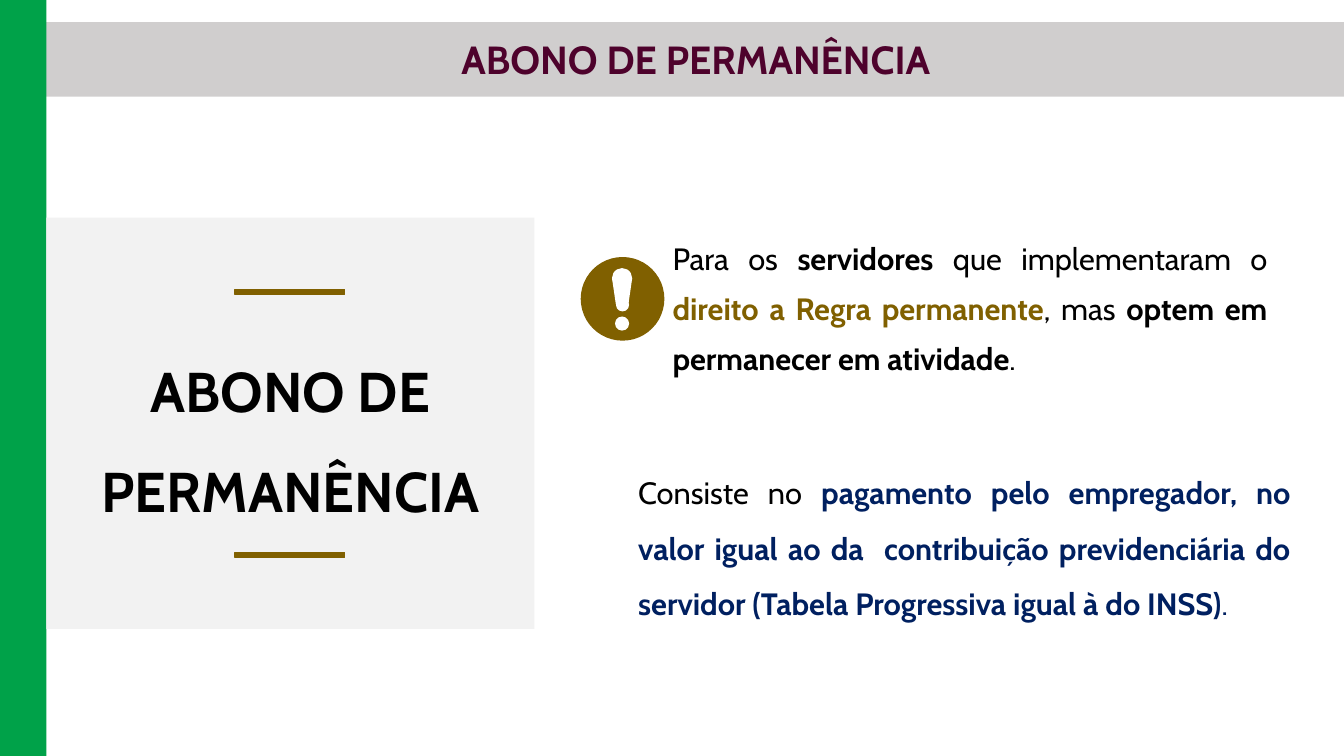
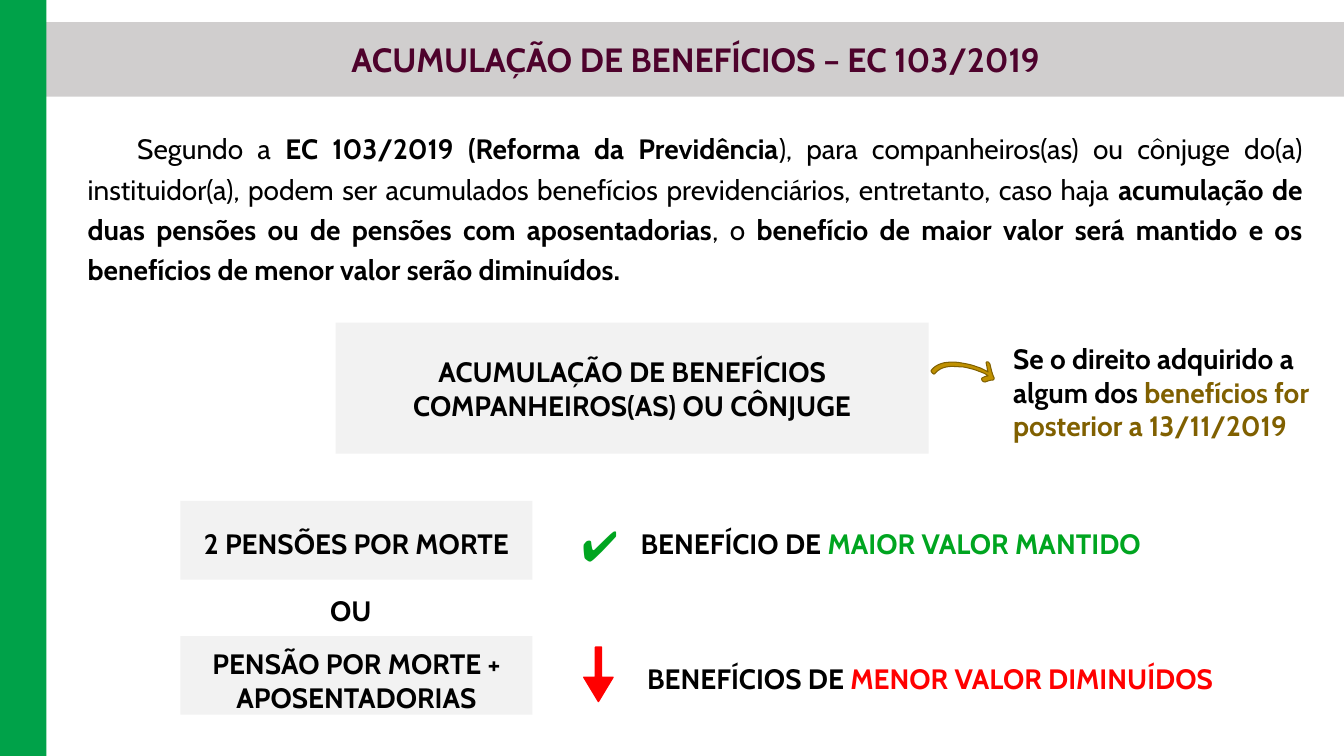
from dataclasses import dataclass
from typing import NamedTuple

from lxml import etree
from pptx import Presentation
from pptx.dml.color import RGBColor
from pptx.enum.shapes import MSO_SHAPE
from pptx.enum.text import MSO_ANCHOR, MSO_AUTO_SIZE, PP_ALIGN
from pptx.oxml.ns import qn
from pptx.util import Inches, Pt

RECTANGLE = MSO_SHAPE.RECTANGLE
OVAL = MSO_SHAPE.OVAL
TRAPEZOID = MSO_SHAPE.TRAPEZOID
DOWN_ARROW = MSO_SHAPE.DOWN_ARROW
LEFT, CENTER, JUSTIFY = PP_ALIGN.LEFT, PP_ALIGN.CENTER, PP_ALIGN.JUSTIFY
TOP, MIDDLE = MSO_ANCHOR.TOP, MSO_ANCHOR.MIDDLE
NO_AUTOFIT = MSO_AUTO_SIZE.NONE

CONTENT_LAYOUT, TWO_CONTENT_LAYOUT = 1, 3
CURVE_STEPS = 6


@dataclass(frozen=True)
class Theme:
    font: str = "Cabin"
    symbol_font: str = "Arial"
    text: str = "000000"
    title: str = "4E022C"
    band: str = "D0CECE"
    side: str = "00A249"
    panel: str = "F2F2F2"
    white: str = "FFFFFF"
    accent: str = "806000"
    gold: str = "BF9000"
    navy: str = "002060"
    green: str = "00A520"
    red: str = "FF0000"
    headline_size: int = 40
    title_size: int = 28
    long_title_size: int = 24
    lead_size: int = 22
    body_size: int = 20
    symbol_size: int = 30


THEME = Theme()


class Span(NamedTuple):
    text: str
    bold: bool = False
    color: str = THEME.text


# Each curve: two control points and an end point, in inches.
ARROW_START = (9.86, 3.75)
ARROW_CURVES = [
    ((9.84, 3.71), (9.83, 3.66), (9.82, 3.62)),
    ((9.82, 3.61), (9.81, 3.6), (9.8, 3.59)),
    ((9.79, 3.59), (9.78, 3.59), (9.78, 3.6)),
    ((9.79, 3.63), (9.79, 3.67), (9.8, 3.69)),
    ((9.76, 3.67), (9.73, 3.65), (9.69, 3.64)),
    ((9.64, 3.62), (9.59, 3.61), (9.53, 3.6)),
    ((9.48, 3.59), (9.42, 3.59), (9.36, 3.6)),
    ((9.32, 3.61), (9.27, 3.63), (9.24, 3.67)),
    ((9.22, 3.68), (9.26, 3.72), (9.27, 3.71)),
    ((9.3, 3.67), (9.34, 3.65), (9.39, 3.64)),
    ((9.44, 3.63), (9.49, 3.64), (9.55, 3.64)),
    ((9.6, 3.65), (9.65, 3.66), (9.7, 3.68)),
    ((9.72, 3.69), (9.77, 3.7), (9.8, 3.73)),
    ((9.78, 3.73), (9.76, 3.74), (9.74, 3.75)),
    ((9.73, 3.76), (9.74, 3.79), (9.77, 3.79)),
    ((9.8, 3.78), (9.82, 3.77), (9.85, 3.77)),
    ((9.86, 3.76), (9.86, 3.76), (9.86, 3.75)),
]


def rgb(color):
    return RGBColor.from_string(color)


def paint(shape, fill, line=None, line_width=1):
    shape.shadow.inherit = False
    shape.fill.solid()
    shape.fill.fore_color.rgb = rgb(fill)
    if line:
        shape.line.color.rgb = rgb(line)
        shape.line.width = Pt(line_width)
    else:
        shape.line.fill.background()


def add_figure(slide, kind, box, fill, line=None):
    shape = slide.shapes.add_shape(kind, *map(Inches, box))
    paint(shape, fill, line)
    return shape


def write(frame, paragraphs, *, size=THEME.body_size, font=THEME.font,
          align=CENTER, anchor=TOP, line_spacing=1.0, first_indent=0):
    """Fill a text frame; each paragraph is a list of spans."""
    frame.word_wrap = True
    frame.auto_size = NO_AUTOFIT
    frame.vertical_anchor = anchor
    for index, spans in enumerate(paragraphs):
        para = frame.add_paragraph() if index else frame.paragraphs[0]
        properties = para._p.get_or_add_pPr()
        properties.set("marL", "0")
        properties.set("indent", str(Inches(first_indent)))
        etree.SubElement(properties, qn("a:buNone"))
        para.alignment = align
        para.line_spacing = line_spacing
        para.space_before = Pt(0)
        for span in spans:
            run = para.add_run()
            run.text = span.text
            run.font.name = font
            run.font.size = Pt(size)
            run.font.bold = span.bold
            run.font.color.rgb = rgb(span.color)


def add_label(slide, box, spans, **text_format):
    label = slide.shapes.add_textbox(*map(Inches, box))
    write(label.text_frame, [spans], **text_format)


def add_panel(slide, box, lines, drop=0, **text_format):
    """Grey panel with bold text, lowered from its middle by drop inches."""
    panel = add_figure(slide, RECTANGLE, box, THEME.panel)
    panel.text_frame.margin_top = Inches(2 * drop)
    panel.text_frame.margin_bottom = 0
    write(panel.text_frame, [[Span(line, True)] for line in lines],
          anchor=MIDDLE, **text_format)


def fill_placeholder(placeholder, box, spans, **text_format):
    (placeholder.left, placeholder.top,
     placeholder.width, placeholder.height) = map(Inches, box)
    write(placeholder.text_frame, [spans], **text_format)


def add_page(deck, layout, title, title_size):
    """Slide with the title, its band and the green side bar."""
    slide = deck.slides.add_slide(deck.slide_layouts[layout])
    band = add_figure(slide, RECTANGLE, (0.22, 0.22, 13.11, 0.74), THEME.band)
    side = add_figure(slide, RECTANGLE, (0, 0, 0.46, 7.5), THEME.side)
    for position, shape in enumerate((band, side), start=2):
        slide.shapes._spTree.insert(position, shape._element)
    fill_placeholder(slide.shapes.title, (0.46, 0.3, 12.88, 0.57),
                     [Span(title, True, THEME.title)],
                     size=title_size, anchor=MIDDLE)
    return slide


def add_warning_icon(slide):
    add_figure(slide, OVAL, (5.76, 2.55, 0.83, 0.83), THEME.accent)
    for left, top, diameter in ((6.07, 2.66, 0.2), (6.11, 2.96, 0.13),
                                (6.1, 3.14, 0.14)):
        add_figure(slide, OVAL, (left, top, diameter, diameter), THEME.white)
    stem = add_figure(slide, TRAPEZOID, (6.07, 2.76, 0.2, 0.26), THEME.white)
    stem.adjustments[0] = 0.19
    stem.rotation = 180


def curve_points(start, curves):
    """Sample a chain of cubic curves."""
    for first, second, end in curves:
        for step in range(1, CURVE_STEPS + 1):
            t = step / CURVE_STEPS
            u = 1 - t
            yield tuple(
                Inches(u**3 * a + 3 * u**2 * t * b + 3 * u * t**2 * c + t**3 * d)
                for a, b, c, d in zip(start, first, second, end))
        start = end


def add_curved_arrow(slide):
    builder = slide.shapes.build_freeform(*map(Inches, ARROW_START))
    builder.add_line_segments(curve_points(ARROW_START, ARROW_CURVES), close=True)
    paint(builder.convert_to_shape(), THEME.gold, THEME.accent, 0.75)


def build_allowance(deck):
    slide = add_page(deck, TWO_CONTENT_LAYOUT, "ABONO DE PERMANÊNCIA",
                     THEME.title_size)
    add_panel(slide, (0.46, 2.16, 4.84, 4.08), ["ABONO DE PERMANÊNCIA"],
              size=THEME.headline_size, line_spacing=1.5)
    for top in (2.87, 5.48):
        add_figure(slide, RECTANGLE, (2.33, top, 1.09, 0.05),
                   THEME.accent, THEME.accent)
    fill_placeholder(slide.placeholders[1], (6.57, 2.2, 6.1, 1.55), [
        Span("Para os "),
        Span("servidores ", True),
        Span("que implementaram o "),
        Span("direito a Regra permanente", True, THEME.accent),
        Span(", mas "),
        Span("optem em permanecer em atividade", True),
        Span("."),
    ], size=THEME.lead_size, align=JUSTIFY, line_spacing=1.35)
    add_warning_icon(slide)
    fill_placeholder(slide.placeholders[2], (6.23, 4.47, 6.67, 2.32), [
        Span("Consiste no "),
        Span("pagamento pelo empregador, no valor igual ao da  contribuição "
             "previdenciária do servidor (Tabela Progressiva igual à do INSS)",
             True, THEME.navy),
        Span(".", color=THEME.navy),
    ], size=THEME.lead_size, align=JUSTIFY, line_spacing=1.5)


def build_accumulation(deck):
    slide = add_page(deck, CONTENT_LAYOUT,
                     "ACUMULAÇÃO DE BENEFÍCIOS – EC 103/2019",
                     THEME.long_title_size)
    fill_placeholder(slide.placeholders[1], (0.77, 1.19, 12.25, 1.72), [
        Span("Segundo a "),
        Span("EC 103/2019 (Reforma da Previdência", True),
        Span("), para companheiros(as) ou cônjuge do(a) instituidor(a), podem "
             "ser acumulados benefícios previdenciários, entretanto, caso haja "),
        Span("acumulação de duas pensões ou de pensões com aposentadorias", True),
        Span(", o "),
        Span("benefício de maior valor será mantido e os benefícios de menor "
             "valor serão diminuídos.", True),
    ], align=JUSTIFY, line_spacing=1.2, first_indent=0.49)

    add_panel(slide, (3.33, 3.2, 5.88, 1.3),
              ["ACUMULAÇÃO DE BENEFÍCIOS", "COMPANHEIROS(AS) OU CÔNJUGE"])
    add_curved_arrow(slide)
    add_label(slide, (9.95, 3.34, 3.3, 1.45), [
        Span("Se o direito adquirido a algum dos ", True),
        Span("benefícios for posterior a 13/11/2019", True, THEME.accent),
    ], align=LEFT)

    for top, text, drop in ((4.97, "2 PENSÕES POR MORTE", 0.03),
                            (6.31, "PENSÃO POR MORTE + APOSENTADORIAS", 0.05)):
        add_panel(slide, (1.79, top, 3.49, 0.78), [text], drop=drop)
    add_label(slide, (1.79, 5.84, 3.38, 0.44), [Span("OU", True)])

    add_label(slide, (5.67, 5.1, 0.43, 0.61), [Span("✔️", color=THEME.green)],
              size=THEME.symbol_size, font=THEME.symbol_font, align=LEFT)
    arrow = add_figure(slide, DOWN_ARROW, (5.79, 6.42, 0.29, 0.54),
                       THEME.red, THEME.red)
    arrow.adjustments[0], arrow.adjustments[1] = 0.21, 0.83
    for box, subject, outcome, color in (
            ((6.03, 5.17, 5.61, 0.44), "BENEFÍCIO DE ",
             "MAIOR VALOR MANTIDO", THEME.green),
            ((6.16, 6.51, 6.13, 0.44), "BENEFÍCIOS DE ",
             "MENOR VALOR DIMINUÍDOS", THEME.red)):
        add_label(slide, box, [Span(subject, True), Span(outcome, True, color)])


def main():
    deck = Presentation()
    deck.slide_width, deck.slide_height = Inches(13.33), Inches(7.5)
    build_allowance(deck)
    build_accumulation(deck)
    deck.save("out.pptx")


if __name__ == "__main__":
    main()
